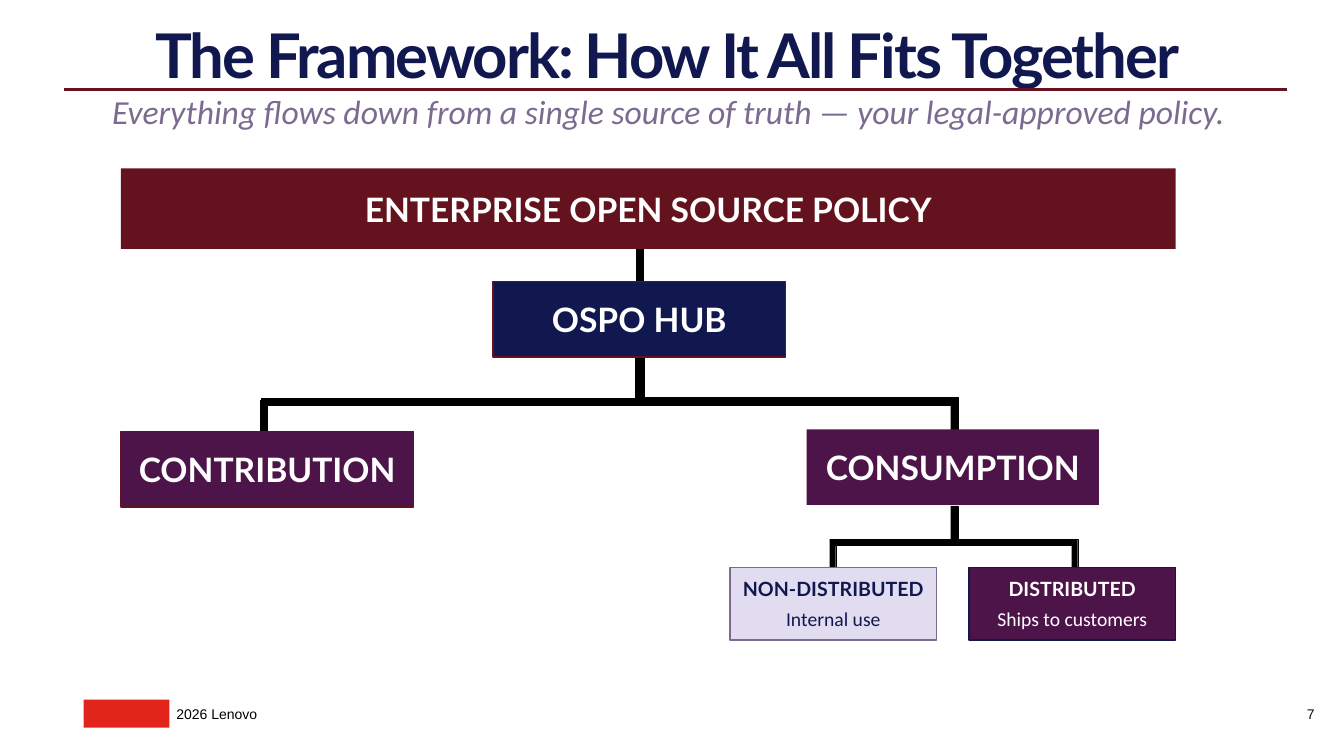
"""Build the open source framework slide: a policy bar over a tree of boxes."""
from dataclasses import dataclass

from pptx import Presentation
from pptx.dml.color import RGBColor
from pptx.enum.shapes import MSO_CONNECTOR, MSO_SHAPE
from pptx.enum.text import MSO_ANCHOR, PP_ALIGN
from pptx.util import Inches, Pt

NAVY, MAROON, PLUM = "11184F", "64131E", "4D144A"
MAUVE, LAVENDER = "7B6B90", "E2DCF0"
WHITE, BLACK, RED = "FFFFFF", "000000", "E1251B"


@dataclass(frozen=True)
class Line:
    text: str
    size: float
    color: str
    font: str = "Lato"
    bold: bool = False
    italic: bool = False
    align: PP_ALIGN = PP_ALIGN.CENTER
    before: float = 0


@dataclass(frozen=True)
class Area:
    left: float
    top: float
    width: float
    height: float


@dataclass(frozen=True)
class Box:
    area: Area
    fill: str
    border: str = ""
    border_width: float = 1
    lines: tuple[Line, ...] = ()


def rgb(color: str) -> RGBColor:
    return RGBColor.from_string(color)


def lengths(area: Area) -> tuple:
    return tuple(map(Inches, (area.left, area.top, area.width, area.height)))


def write(shape, lines: tuple[Line, ...], anchor: MSO_ANCHOR) -> None:
    frame = shape.text_frame
    frame.word_wrap = True
    frame.vertical_anchor = anchor
    frame.margin_left = frame.margin_right = 0
    frame.margin_top = frame.margin_bottom = 0
    for index, line in enumerate(lines):
        para = frame.add_paragraph() if index else frame.paragraphs[0]
        para.text = line.text
        para.alignment = line.align
        if line.before:
            para.space_before = Pt(line.before)
        font = para.font
        font.name, font.size = line.font, Pt(line.size)
        font.bold, font.italic = line.bold, line.italic
        font.color.rgb = rgb(line.color)


def draw_box(page, box: Box) -> None:
    shape = page.shapes.add_shape(MSO_SHAPE.RECTANGLE, *lengths(box.area))
    shape.shadow.inherit = False
    shape.fill.solid()
    shape.fill.fore_color.rgb = rgb(box.fill)
    if box.border:
        shape.line.color.rgb = rgb(box.border)
        shape.line.width = Pt(box.border_width)
    else:
        shape.line.fill.background()
    if box.lines:
        write(shape, box.lines, MSO_ANCHOR.MIDDLE)


def draw_text(page, area: Area, line: Line) -> None:
    write(page.shapes.add_textbox(*lengths(area)), (line,), MSO_ANCHOR.MIDDLE)


def draw_title(page, text: str) -> None:
    title = page.shapes.title
    title.left, title.top, title.width, title.height = lengths(Area(0.73, 0.14, 11.78, 0.75))
    write(title, (Line(text, 44, NAVY, bold=True),), MSO_ANCHOR.BOTTOM)
    para = title.text_frame.paragraphs[0]
    para.line_spacing = 0.75
    para.runs[0].font._element.set("spc", "-150")


def draw_rule(page) -> None:
    rule = page.shapes.add_connector(
        MSO_CONNECTOR.STRAIGHT, Inches(0.63), Inches(0.89), Inches(12.76), Inches(0.89))
    rule.line.color.rgb = rgb(MAROON)
    rule.line.width = Pt(2)
    properties = rule._element.spPr
    properties.append(properties.makeelement(
        "{http://schemas.openxmlformats.org/drawingml/2006/main}effectLst", {}))


def heading(text: str) -> tuple[Line, ...]:
    return (Line(text, 24, WHITE, bold=True),)


def card(name: str, detail: str, color: str) -> tuple[Line, ...]:
    return (Line(name, 14, color, bold=True),
            Line(detail, 14, color, "Calibri", before=4.5))


BRANCHES = (
    Area(9.43, 5.02, 0.07, 0.34),
    Area(6.3, 3.33, 0.09, 0.68),
    Area(6.31, 2.45, 0.07, 0.36),
    Area(2.59, 3.95, 3.77, 0.07),
    Area(6.36, 3.94, 3.14, 0.08),
    Area(2.58, 3.97, 0.07, 0.88),
    Area(9.43, 3.97, 0.07, 0.36),
    Area(8.26, 5.35, 2.4, 0.06),
    Area(8.23, 5.35, 0.06, 0.3),
    Area(10.63, 5.35, 0.06, 0.3),
)

BOXES = (
    Box(Area(1.2, 4.28, 2.9, 0.75), PLUM, MAROON, lines=heading("CONTRIBUTION")),
    Box(Area(8, 4.26, 2.9, 0.75), PLUM, lines=heading("CONSUMPTION")),
    Box(Area(7.24, 5.63, 2.05, 0.72), LAVENDER, MAUVE,
        lines=card("NON-DISTRIBUTED", "Internal use", NAVY)),
    Box(Area(9.61, 5.63, 2.05, 0.72), PLUM, NAVY,
        lines=card("DISTRIBUTED", "Ships to customers", WHITE)),
    Box(Area(4.89, 2.79, 2.9, 0.75), NAVY, MAROON, lines=heading("OSPO HUB")),
    Box(Area(1.2, 1.67, 10.46, 0.8), MAROON,
        lines=heading("ENTERPRISE OPEN SOURCE POLICY")),
)


def main() -> None:
    deck = Presentation()
    deck.slide_width, deck.slide_height = Inches(13.33), Inches(7.5)
    page = deck.slides.add_slide(deck.slide_layouts[5])
    draw_title(page, "The Framework: How It All Fits Together")
    draw_box(page, Box(Area(0.83, 6.94, 0.85, 0.28), RED))
    draw_text(page, Area(1.75, 7, 4.5, 0.17),
              Line("2026 Lenovo", 10, BLACK, "Arial", align=PP_ALIGN.LEFT))
    draw_text(page, Area(12.76, 7, 0.48, 0.17), Line("7", 10, "0D0D0D", "Arial"))
    for area in BRANCHES:
        draw_box(page, Box(area, BLACK, BLACK, 0.25))
    for box in BOXES:
        draw_box(page, box)
    draw_text(page, Area(0.36, 0.85, 12.54, 0.5), Line(
        "Everything flows down from a single source of truth — your legal-approved policy.",
        24, MAUVE, "Calibri", italic=True))
    draw_rule(page)
    deck.save("out.pptx")


if __name__ == "__main__":
    main()
